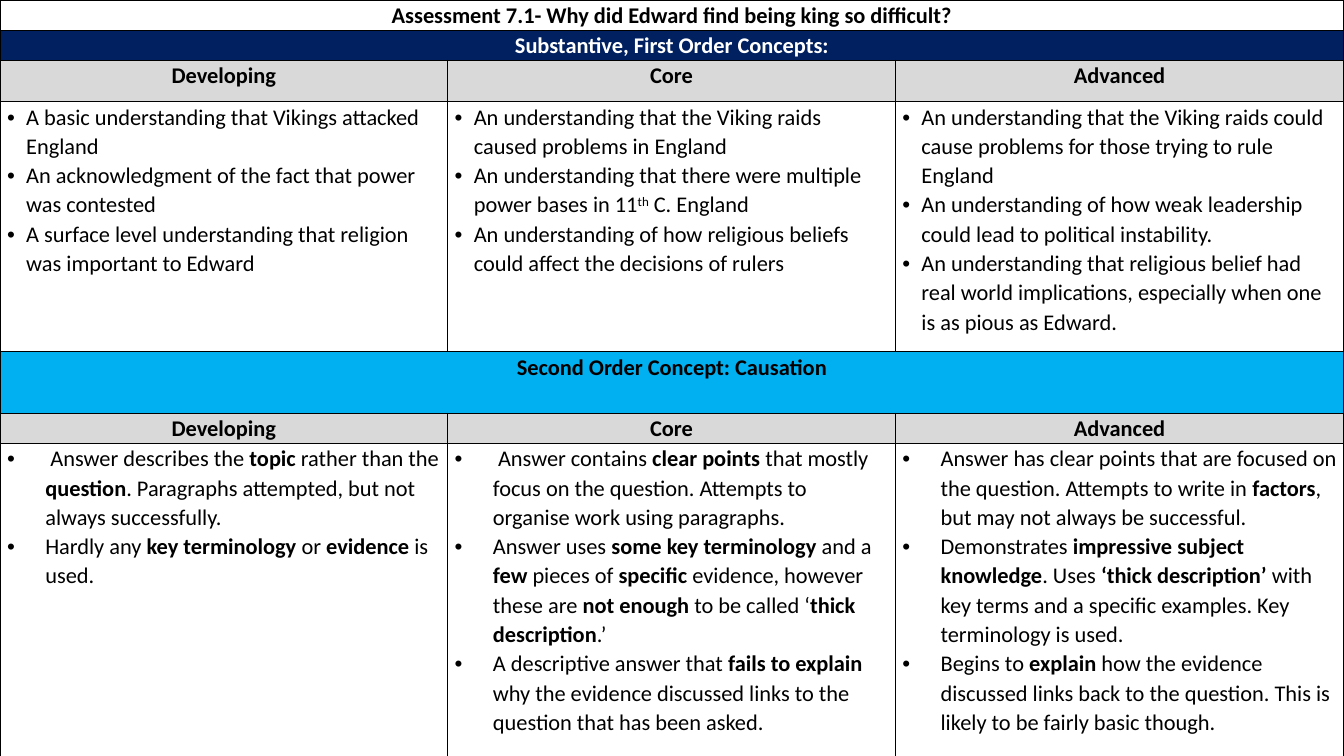
import pptx
import pptx.dml.color
import pptx.enum.text
import pptx.oxml
import pptx.oxml.ns
import pptx.util
from pptx.util import Inches

BLACK, WHITE, NAVY, GREY, BLUE = "000000", "FFFFFF", "002060", "D9D9D9", "00B0F0"
LEVELS = ["Developing", "Core", "Advanced"]


def color(hex_code):
    return pptx.dml.color.RGBColor.from_string(hex_code)


def add_text(paragraph, text, text_color=BLACK):
    """Add runs: *bold* and ^superscript^."""
    paragraph.line_spacing = 1.07
    for i, part in enumerate(text.split("*")):
        for j, piece in enumerate(part.split("^")):
            if not piece:
                continue
            run = paragraph.add_run()
            run.text = piece
            run.font.name = "Calibri"
            run.font.size = pptx.util.Pt(16)
            run.font.bold = i % 2 == 1
            run.font.color.rgb = color(text_color)
            if j % 2 == 1:
                run._r.get_or_add_rPr().set("baseline", "30000")


# Wording
substantive = [
    ["A basic understanding that Vikings attacked England",
     "An acknowledgment of the fact that power was contested",
     "A surface level understanding that religion was important to Edward"],
    ["An understanding that the Viking raids caused problems in England",
     "An understanding that there were multiple power bases in 11^th^ C. England",
     "An understanding of how religious beliefs could affect the decisions of rulers"],
    ["An understanding that the Viking raids could cause problems for those trying to rule England",
     "An understanding of how weak leadership could lead to political instability.",
     "An understanding that religious belief had real world implications, especially when one "
     "is as pious as Edward."],
]
causation = [
    [" Answer describes the *topic* rather than the *question*. Paragraphs attempted, "
     "but not always successfully.",
     "Hardly any *key terminology* or *evidence* is used."],
    [" Answer contains *clear points* that mostly focus on the question. Attempts to "
     "organise work using paragraphs.",
     "Answer uses *some key terminology* and a *few *pieces of *specific* evidence, however "
     "these are *not enough *to be called ‘*thick description*.’",
     "A descriptive answer that *fails to explain* why the evidence discussed links to the "
     "question that has been asked."],
    ["Answer has clear points that are focused on the question. Attempts to write in "
     "*factors*, but may not always be successful.",
     "Demonstrates *impressive subject knowledge*. Uses *‘thick description’* with key terms "
     "and a specific examples. Key terminology is used.",
     "Begins to *explain* how the evidence discussed links back to the question. This is "
     "likely to be fairly basic though."],
]

presentation = pptx.Presentation()
presentation.slide_width = Inches(13.33)
presentation.slide_height = Inches(7.5)
slide = presentation.slides.add_slide(presentation.slide_layouts[6])

# Table grid
row_heights = [0.3, 0.3, 0.41, 2.48, 0.61, 0.3, 3.11]
column_widths = [4.44, 4.44, 4.45]
table = slide.shapes.add_table(7, 3, 0, 0, Inches(13.33), Inches(7.5)).table
table.first_row = False
table.horz_banding = False
for row, height in zip(table.rows, row_heights):
    row.height = Inches(height)
for column, width in zip(table.columns, column_widths):
    column.width = Inches(width)

# Margins and borders of every cell
for cell in table.iter_cells():
    cell.margin_left = cell.margin_right = Inches(0.07)
    cell.margin_top = cell.margin_bottom = 0
    properties = cell._tc.get_or_add_tcPr()
    for side in ("lnL", "lnR", "lnT", "lnB"):
        properties.append(pptx.oxml.parse_xml(
            f'<a:{side} {pptx.oxml.ns.nsdecls("a")} w="12700"><a:solidFill>'
            f'<a:srgbClr val="{BLACK}"/></a:solidFill></a:{side}>'))
    cell.fill.background()

# Full-width bands and level headings
headings = [
    (0, ["Assessment 7.1- Why did Edward find being king so difficult?"], None, BLACK),
    (1, ["Substantive, First Order Concepts:"], NAVY, WHITE),
    (2, LEVELS, GREY, BLACK),
    (4, ["Second Order Concept: Causation"], BLUE, BLACK),
    (5, LEVELS, GREY, BLACK),
]
for row_index, titles, fill, text_color in headings:
    if len(titles) == 1:
        table.cell(row_index, 0).merge(table.cell(row_index, 2))
    for column_index, title in enumerate(titles):
        cell = table.cell(row_index, column_index)
        if fill:
            cell.fill.solid()
            cell.fill.fore_color.rgb = color(fill)
        paragraph = cell.text_frame.paragraphs[0]
        paragraph.alignment = pptx.enum.text.PP_ALIGN.CENTER
        add_text(paragraph, f"*{title}*", text_color)

# Bulleted criteria
for row_index, criteria, indent in [(3, substantive, 0.19), (6, causation, 0.38)]:
    for column_index, bullets in enumerate(criteria):
        text_frame = table.cell(row_index, column_index).text_frame
        for i, bullet in enumerate(bullets):
            paragraph = text_frame.add_paragraph() if i else text_frame.paragraphs[0]
            add_text(paragraph, bullet)
            properties = paragraph._p.get_or_add_pPr()
            properties.set("marL", str(Inches(indent)))
            properties.set("indent", str(-Inches(indent)))
            for tag in ('buFont typeface="Arial"', 'buChar char="•"'):
                properties.append(pptx.oxml.parse_xml(
                    f'<a:{tag} {pptx.oxml.ns.nsdecls("a")}/>'))

presentation.save("out.pptx")
